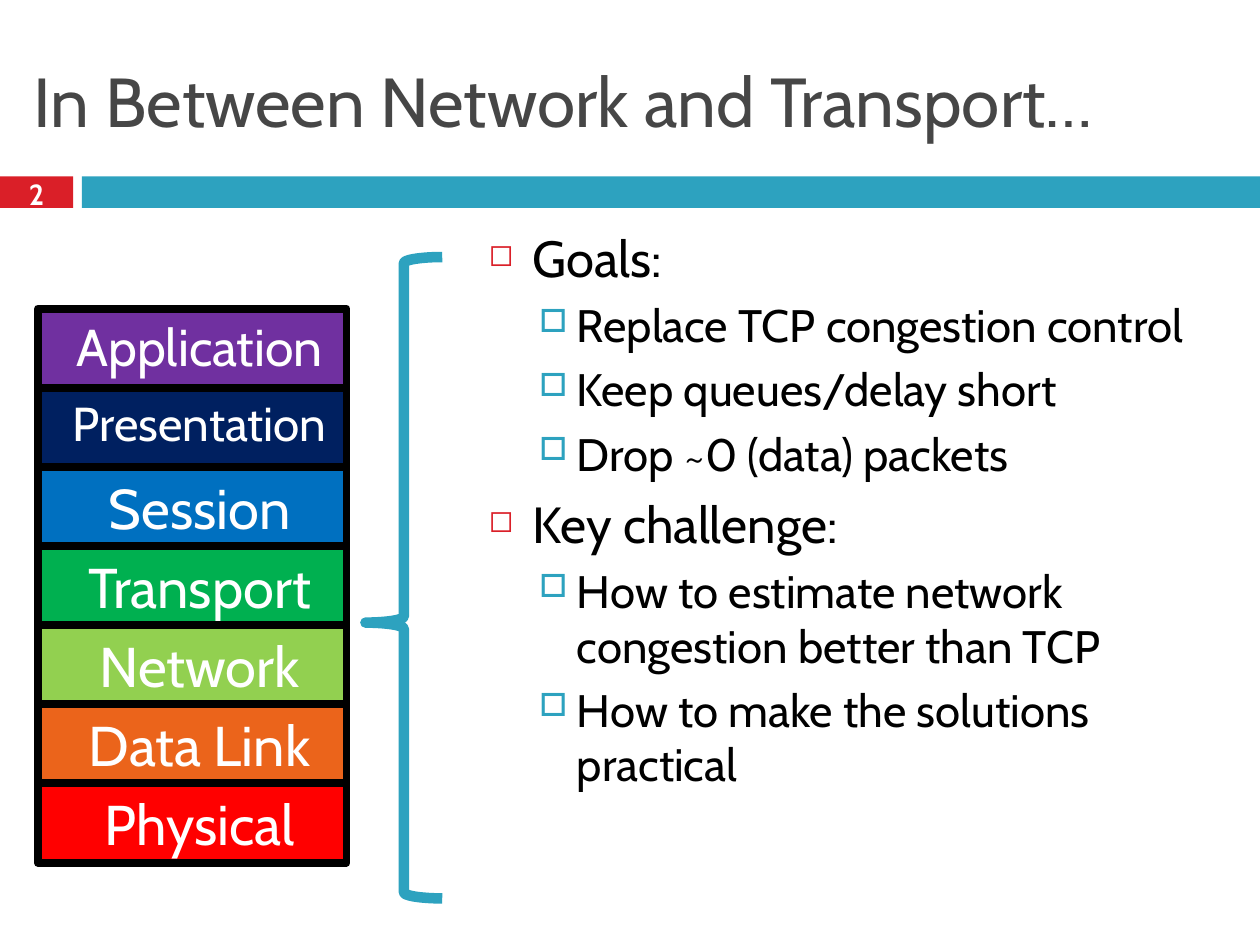
from lxml.etree import SubElement
from pptx import Presentation
from pptx.dml.color import RGBColor
from pptx.enum.shapes import MSO_SHAPE
from pptx.enum.text import MSO_ANCHOR, PP_ALIGN
from pptx.oxml.ns import qn
from pptx.util import Inches, Pt

TEAL, RED, WHITE, BLACK = "2DA2BF", "DA1F28", "FFFFFF", "000000"


def paint(target, color):
    """Give a fill, or a font's or line's fill, a solid colour."""
    target.solid()
    target.fore_color.rgb = RGBColor.from_string(color)


def write(par, text, size, color):
    par.text = text
    par.font.name = "Cabin"
    par.font.size = Pt(size)
    paint(par.font.fill, color)


deck = Presentation()
deck.slide_width, deck.slide_height = Inches(10), Inches(7.5)
slide = deck.slides.add_slide(deck.slide_layouts[6])
shapes = slide.shapes

# Header bars
for left, width, color in [(0, 0.58, RED), (0.65, 9.35, TEAL)]:
    bar = shapes.add_shape(MSO_SHAPE.RECTANGLE, Inches(left), Inches(1.4),
                           Inches(width), Inches(0.25))
    bar.shadow.inherit = False
    paint(bar.fill, color)
    bar.line.fill.background()

# Title and page number
title = shapes.add_textbox(Inches(0.17), Inches(0.25), Inches(9.67), Inches(1.08)).text_frame
write(title.paragraphs[0], "In Between Network and Transport…", 39.6, "464646")
number = shapes.add_textbox(Inches(0), Inches(1.37), Inches(0.58), Inches(0.33)).text_frame
write(number.paragraphs[0], "2", 16.6, WHITE)
number.paragraphs[0].font.bold = True
number.paragraphs[0].alignment = PP_ALIGN.CENTER
for frame in (title, number):
    frame.word_wrap = True
    frame.vertical_anchor = MSO_ANCHOR.MIDDLE

# Bulleted goals: level, text
points = [
    (0, "Goals:"),
    (1, "Replace TCP congestion control"),
    (1, "Keep queues/delay short"),
    (1, "Drop ~0 (data) packets"),
    (0, "Key challenge:"),
    (1, "How to estimate network congestion better than TCP"),
    (1, "How to make the solutions practical"),
]
# Per level: size, space before, margin, hanging indent, bullet, colour, percent
styles = [
    (29, 7, 0.35, -0.35, "◻", RED, 60),
    (26, 5.5, 0.7, -0.3, "□", TEAL, 70),
]
body = shapes.add_textbox(Inches(3.78), Inches(1.75), Inches(6.22), Inches(5.58)).text_frame
body.word_wrap = True
for i, (level, text) in enumerate(points):
    size, space, margin, hang, mark, color, percent = styles[level]
    par = body.add_paragraph() if i else body.paragraphs[0]
    write(par, text, size, BLACK)
    par.level = level
    par.space_before = Pt(space)
    props = par._p.get_or_add_pPr()
    props.set("marL", str(Inches(margin)))
    props.set("indent", str(Inches(hang)))
    SubElement(SubElement(props, qn("a:buClr")), qn("a:srgbClr"), val=color)
    SubElement(props, qn("a:buSzPct"), val=str(percent * 1000))
    SubElement(props, qn("a:buChar"), char=mark)

# Network layer stack
layers = [
    ("Application", "7030A0", 29.6),
    ("Presentation", "002060", 27.2),
    ("Session", "0070C0", 32),
    ("Transport", "00B050", 32),
    ("Network", "92D050", 32),
    ("Data Link", "EB641B", 32),
    ("Physical", "FF0000", 32),
]
for i, (name, color, size) in enumerate(layers):
    layer = shapes.add_shape(MSO_SHAPE.RECTANGLE, Inches(0.3), Inches(2.45 + 0.628 * i),
                             Inches(2.45), Inches(0.63))
    layer.shadow.inherit = False
    paint(layer.fill, color)
    paint(layer.line.fill, BLACK)
    layer.line.width = Pt(4.5)
    SubElement(layer.line._ln, qn("a:round"))
    layer.text_frame.vertical_anchor = MSO_ANCHOR.TOP
    par = layer.text_frame.paragraphs[0]
    write(par, name, size, WHITE)
    par.alignment = PP_ALIGN.CENTER
    par._p.get_or_add_pPr().set("marL", str(Inches(0.12)))

# Brace pointing between the transport and network layers
brace = shapes.add_shape(MSO_SHAPE.LEFT_BRACE, Inches(2.9), Inches(2.04),
                         Inches(0.61), Inches(5.09))
brace.shadow.inherit = False
brace.adjustments[0], brace.adjustments[1] = 0.08, 0.57
brace.fill.background()
paint(brace.line.fill, TEAL)
brace.line.width = Pt(6)

deck.save("out.pptx")
